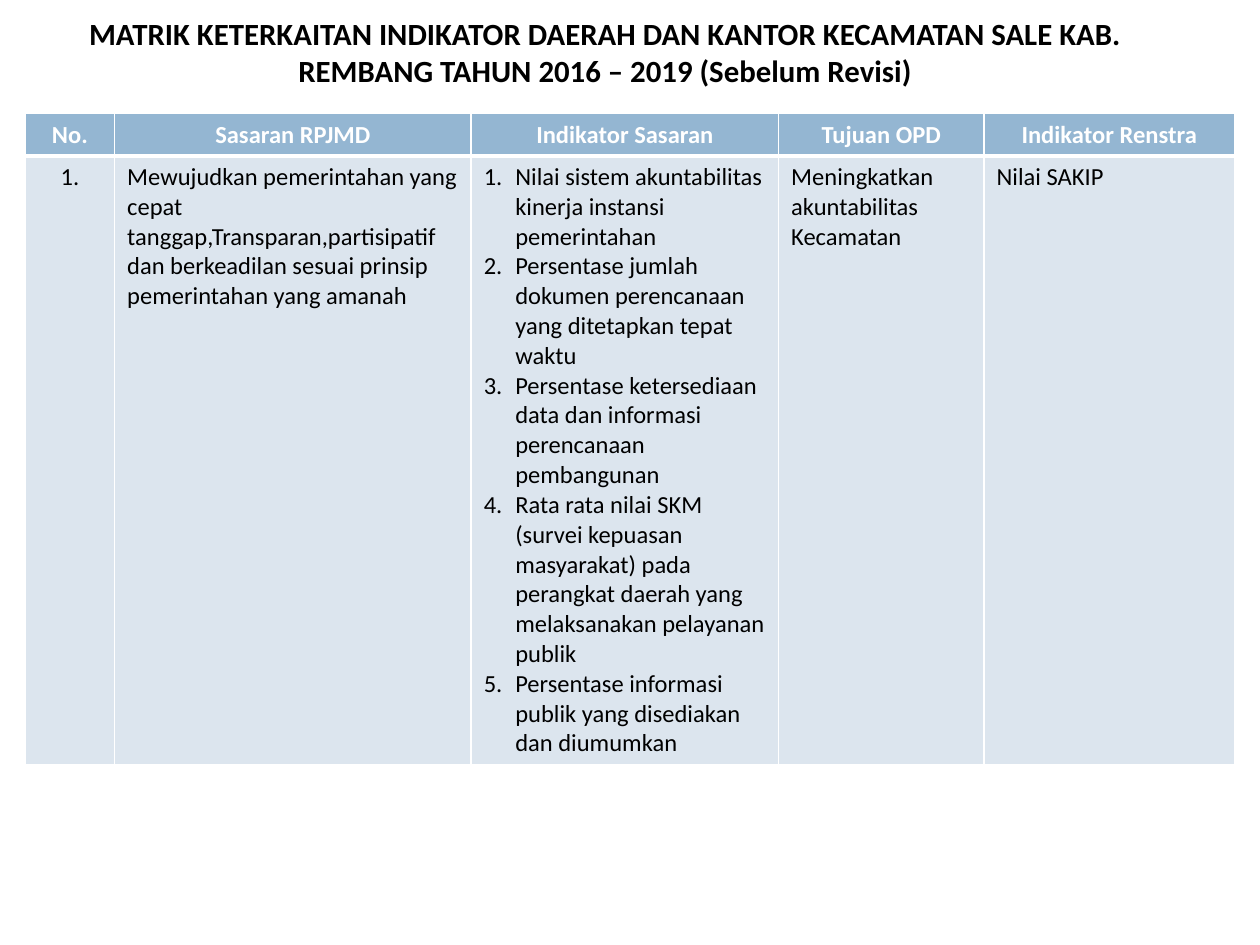
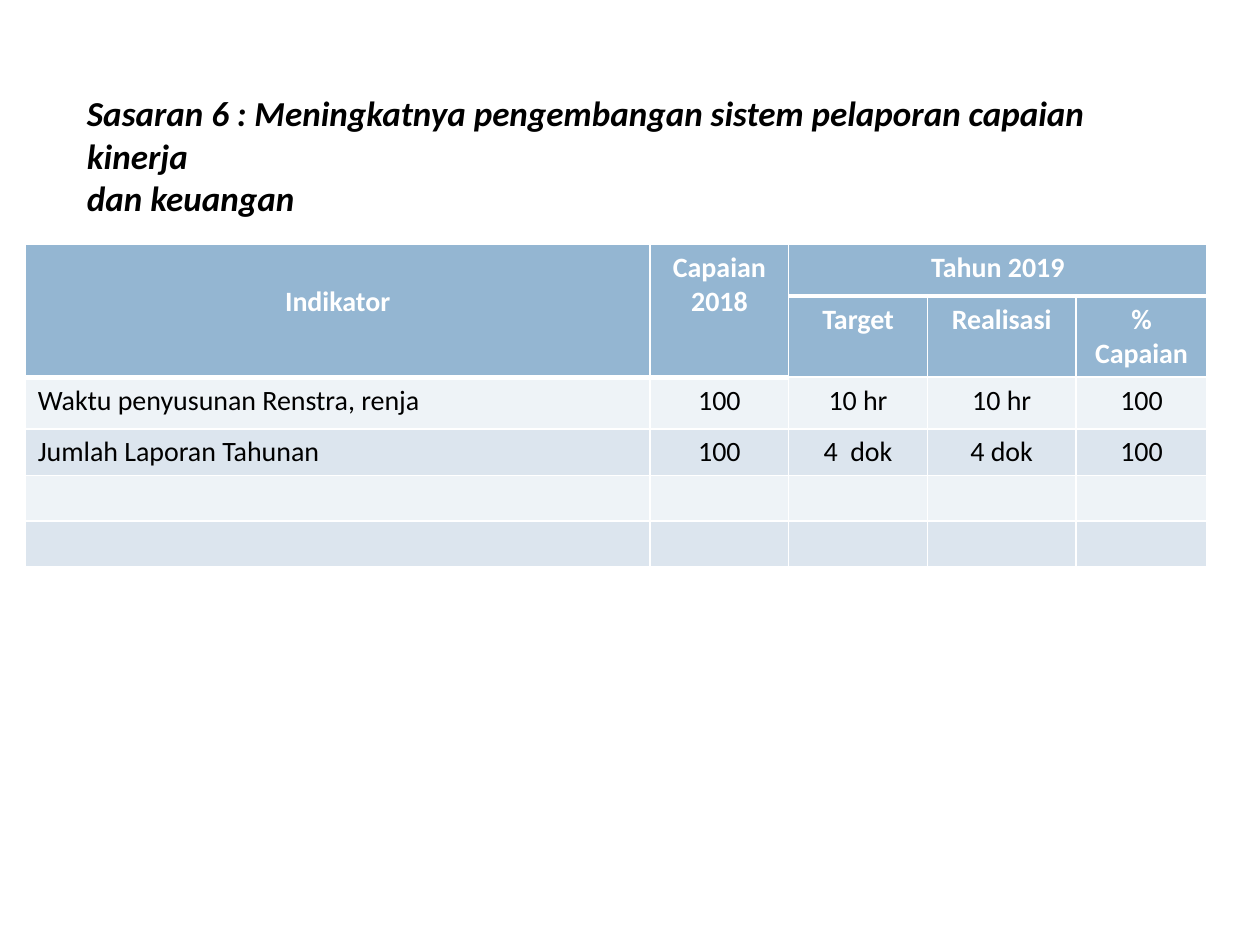
from lxml.etree import SubElement
from pptx import Presentation
from pptx.dml.color import RGBColor
from pptx.enum.text import MSO_ANCHOR, MSO_AUTO_SIZE, PP_ALIGN
from pptx.oxml.ns import qn
from pptx.util import Inches, Pt

# Shared look
FONT = "Calibri"
BLACK = RGBColor(0x00, 0x00, 0x00)
WHITE = RGBColor(0xFF, 0xFF, 0xFF)
HEADER_BLUE = RGBColor(0x94, 0xB6, 0xD2)
BAND_DARK = RGBColor(0xDC, 0xE5, 0xEE)
BAND_LIGHT = RGBColor(0xEE, 0xF3, 0xF7)
TABLE_LEFT = 0.2
NUMBER_INDENT = Inches(0.25)

# Content: a list inside a cell is a numbered list
MATRIX = {
    "title": ["MATRIK KETERKAITAN INDIKATOR DAERAH DAN KANTOR KECAMATAN SALE KAB. "
              "REMBANG TAHUN 2016 – 2019 (Sebelum Revisi)"],
    "title_box": (0.2, 0.07, 9.21, 1.08),
    "title_font": (17.6, False, PP_ALIGN.CENTER),
    "top": 0.9,
    "size": 14,
    "columns": [0.71, 2.83, 2.44, 1.63, 1.99],
    "heights": [0.33, 4.82],
    "header_rows": 1,
    "bands": [BAND_DARK],
    "centred_columns": {0},
    "merges": [],
    "thick_cells": {(0, column) for column in range(5)},
    "rows": [
        ["No.", "Sasaran RPJMD", "Indikator Sasaran", "Tujuan OPD", "Indikator Renstra"],
        ["1.",
         "Mewujudkan pemerintahan yang cepat tanggap,Transparan,partisipatif "
         "dan berkeadilan sesuai prinsip pemerintahan yang amanah",
         ["Nilai sistem akuntabilitas kinerja instansi pemerintahan",
          "Persentase jumlah dokumen perencanaan yang ditetapkan tepat waktu",
          "Persentase ketersediaan data dan informasi perencanaan pembangunan",
          "Rata rata nilai SKM (survei kepuasan masyarakat) pada perangkat daerah "
          "yang melaksanakan pelayanan publik",
          "Persentase informasi publik yang disediakan dan diumumkan"],
         "Meningkatkan akuntabilitas Kecamatan",
         "Nilai SAKIP"],
    ],
}

TARGETS = {
    "title": ["Sasaran 6 : Meningkatnya pengembangan sistem pelaporan capaian kinerja",
              "dan keuangan"],
    "title_box": (0.59, 0.68, 8.3, 1.1),
    "title_font": (20, True, PP_ALIGN.LEFT),
    "top": 1.94,
    "size": 16,
    "columns": [4.96, 1.1, 1.1, 1.18, 1.04],
    "heights": [0.41, 0.63, 0.41, 0.36, 0.36, 0.36],
    "header_rows": 2,
    "bands": [BAND_LIGHT, BAND_DARK],
    "centred_columns": {1, 2, 3, 4},
    "merges": [((0, 0), (1, 0)), ((0, 1), (1, 1)), ((0, 2), (0, 4))],
    "thick_cells": {(0, 0), (1, 0), (0, 1), (1, 1), (0, 2), (0, 3), (0, 4)},
    "lowered_cell": (0, 0),
    "rows": [
        ["Indikator", "Capaian 2018", "Tahun 2019", "", ""],
        ["", "", "Target", "Realisasi", "% Capaian"],
        ["Waktu penyusunan Renstra, renja", "100", "10 hr", "10 hr", "100"],
        ["Jumlah Laporan Tahunan", "100", "4  dok", "4 dok", "100"],
        [""] * 5,
        [""] * 5,
    ],
}


def format_paragraph(paragraph, size, color, alignment, bold=False, italic=False):
    paragraph.alignment = alignment
    font = paragraph.font
    font.name, font.size = FONT, Pt(size)
    font.bold, font.italic = bold, italic
    font.color.rgb = color


def number_paragraph(paragraph):
    properties = paragraph._p.get_or_add_pPr()
    properties.set("marL", str(NUMBER_INDENT))
    properties.set("indent", str(-NUMBER_INDENT))
    bullet = SubElement(properties, qn("a:buAutoNum"), type="arabicPeriod")
    properties.insert(0, bullet)


def set_borders(cell, bottom_width):
    properties = cell._tc.get_or_add_tcPr()
    for side, width in (("L", 1), ("R", 1), ("T", 1), ("B", bottom_width)):
        line = SubElement(properties, qn(f"a:ln{side}"), w=str(Pt(width)))
        fill = SubElement(line, qn("a:solidFill"))
        SubElement(fill, qn("a:srgbClr"), val=str(WHITE))


def add_title(slide, content):
    title = slide.shapes.title
    title.left, title.top, title.width, title.height = map(Inches, content["title_box"])
    frame = title.text_frame
    frame.word_wrap = True
    frame.auto_size = MSO_AUTO_SIZE.NONE
    frame.vertical_anchor = MSO_ANCHOR.TOP
    frame.text = "\n".join(content["title"])
    size, italic, alignment = content["title_font"]
    for paragraph in frame.paragraphs:
        format_paragraph(paragraph, size, BLACK, alignment, bold=True, italic=italic)


def fill_cell(cell, value, position, content):
    row, column = position
    is_header = row < content["header_rows"]
    bands = content["bands"]
    set_borders(cell, 3 if position in content["thick_cells"] else 1)
    cell.fill.solid()
    cell.fill.fore_color.rgb = (HEADER_BLUE if is_header else
                                bands[(row - content["header_rows"]) % len(bands)])
    if not value:
        cell.margin_top = cell.margin_bottom = 0
    if position == content.get("lowered_cell"):
        cell.margin_top = Inches(0.32)

    numbered = isinstance(value, list)
    cell.text = "\n".join(value) if numbered else value
    centred = is_header or column in content["centred_columns"]
    for paragraph in cell.text_frame.paragraphs:
        format_paragraph(paragraph, content["size"], WHITE if is_header else BLACK,
                         PP_ALIGN.CENTER if centred else PP_ALIGN.LEFT, bold=is_header)
        if numbered:
            number_paragraph(paragraph)


def add_matrix(slide, content):
    columns, heights = content["columns"], content["heights"]
    table = slide.shapes.add_table(
        len(heights), len(columns), Inches(TABLE_LEFT), Inches(content["top"]),
        Inches(sum(columns)), Inches(sum(heights))).table
    for column, width in zip(table.columns, columns):
        column.width = Inches(width)
    for row, height in zip(table.rows, heights):
        row.height = Inches(height)
    for row, values in enumerate(content["rows"]):
        for column, value in enumerate(values):
            fill_cell(table.cell(row, column), value, (row, column), content)
    for first, last in content["merges"]:
        table.cell(*first).merge(table.cell(*last))


def main():
    presentation = Presentation()
    presentation.slide_width, presentation.slide_height = Inches(10), Inches(7.5)
    title_only = presentation.slide_layouts[5]
    for content in (MATRIX, TARGETS):
        slide = presentation.slides.add_slide(title_only)
        add_title(slide, content)
        add_matrix(slide, content)
    presentation.save("out.pptx")


if __name__ == "__main__":
    main()
